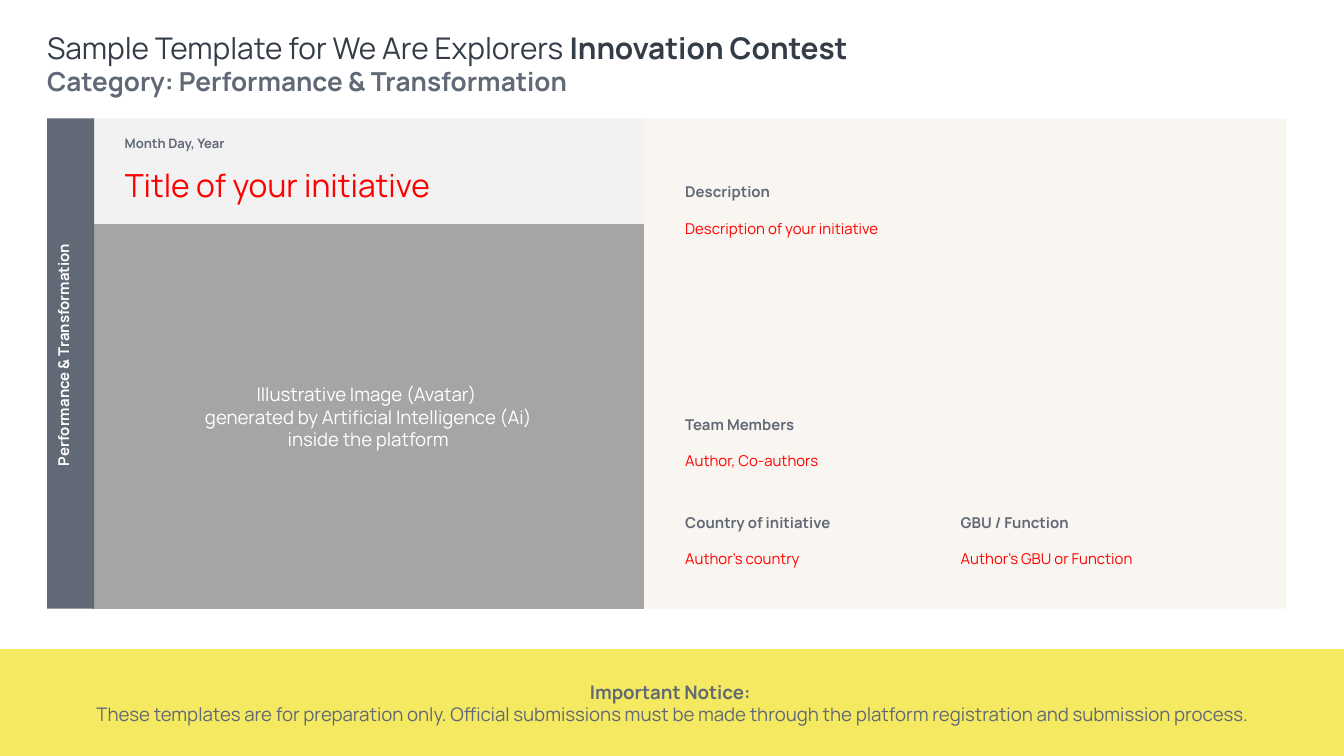
from dataclasses import dataclass

from pptx import Presentation
from pptx.dml.color import RGBColor
from pptx.enum.shapes import MSO_SHAPE
from pptx.enum.text import MSO_ANCHOR, MSO_AUTO_SIZE, PP_ALIGN
from pptx.util import Inches, Pt

RECT = MSO_SHAPE.RECTANGLE
TOP, MIDDLE = MSO_ANCHOR.TOP, MSO_ANCHOR.MIDDLE
LEFT, CENTER = PP_ALIGN.LEFT, PP_ALIGN.CENTER

FONT = "Manrope"
SLATE, DARK, RED, WHITE, GRAY = "616976", "343C47", "FF0000", "FFFFFF", "A5A5A5"
CARD_TOP, CARD_HEIGHT = 0.88, 3.65
CATEGORY = "Performance & Transformation"


@dataclass
class Box:
    left: float
    top: float
    width: float
    height: float


@dataclass
class Line:
    text: str
    size: float
    color: str
    bold: bool = False
    before: float = 0
    spacing: float = 1.0


@dataclass
class Field:
    box: Box
    label: str
    value: str


FIELDS = [
    Field(Box(5, 1.26, 3.8, 1.73), "Description", "Description of your initiative"),
    Field(Box(5, 2.99, 3.8, 0.73), "Team Members", "Author, Co-authors"),
    Field(Box(5, 3.72, 2.05, 0.73), "Country of initiative", "Author’s country"),
    Field(Box(7.05, 3.72, 2.05, 0.73), "GBU / Function", "Author’s GBU or Function"),
]


def rgb(color: str) -> RGBColor:
    return RGBColor.from_string(color)


def inches(box: Box) -> list:
    return [Inches(v) for v in (box.left, box.top, box.width, box.height)]


def set_font(font, size: float, color: str, bold: bool = False) -> None:
    font.name = FONT
    font.size = Pt(size)
    font.bold = bold
    font.color.rgb = rgb(color)


def write(sp, lines: list[Line], align=LEFT, anchor=TOP, inset: float = 0.1) -> None:
    tf = sp.text_frame
    tf.word_wrap = True
    tf.auto_size = MSO_AUTO_SIZE.NONE
    tf.vertical_anchor = anchor
    tf.margin_left = tf.margin_right = tf.margin_top = tf.margin_bottom = Inches(inset)
    for i, line in enumerate(lines):
        p = tf.add_paragraph() if i else tf.paragraphs[0]
        p.alignment = align
        p.line_spacing = line.spacing
        p.space_before = Pt(line.before)
        set_font(p.font, line.size, line.color, line.bold)
        p.add_run().text = line.text


def add_panel(s, box: Box, fill: str, border: str = ""):
    sp = s.shapes.add_shape(RECT, *inches(box))
    sp.shadow.inherit = False
    sp.fill.solid()
    sp.fill.fore_color.rgb = rgb(fill)
    if border:
        sp.line.color.rgb = rgb(border)
        sp.line.width = Pt(0.75)
    else:
        sp.line.fill.background()
    return sp


def add_text(s, box: Box, lines: list[Line], align=LEFT):
    sp = s.shapes.add_textbox(*inches(box))
    write(sp, lines, align)
    return sp


def add_title(s) -> None:
    sp = s.shapes.title
    sp.left, sp.top, sp.width, sp.height = inches(Box(0.35, 0.22, 9.05, 0.48))
    write(sp, [
        Line("Sample Template for We Are Explorers ", 16, DARK),
        Line(f"Category: {CATEGORY}", 14, SLATE, bold=True),
    ], inset=0)
    r = sp.text_frame.paragraphs[0].add_run()
    r.text = "Innovation Contest"
    r.font.bold = True


def main() -> None:
    prs = Presentation()
    prs.slide_width = Inches(10)
    prs.slide_height = prs.slide_width * 9 // 16
    s = prs.slides.add_slide(prs.slide_layouts[5])
    add_title(s)

    add_panel(s, Box(4.79, CARD_TOP, 4.78, CARD_HEIGHT), "F9F5F0")
    add_panel(s, Box(0.69, CARD_TOP, 4.1, CARD_HEIGHT), "F2F2F2")

    notice = add_panel(s, Box(0, 4.83, 10, 0.8), "F4E960")
    write(notice, [
        Line("Important Notice: ", 10, SLATE, bold=True),
        Line("These templates are for preparation only. Official submissions must be "
             "made through the platform registration and submission process.", 10, SLATE),
    ], CENTER, MIDDLE)

    avatar = add_panel(s, Box(0.69, 1.67, 4.1, 2.86), GRAY, border=GRAY)
    avatar_text = ("Illustrative Image (Avatar) ",
                   "generated by Artificial Intelligence (Ai)",
                   "inside the platform")
    write(avatar, [Line(t, 10, WHITE) for t in avatar_text], CENTER, MIDDLE)

    add_text(s, Box(0.83, 0.94, 1.37, 0.32),
             [Line("Month Day, Year", 7, SLATE, bold=True, spacing=0.7)])
    add_text(s, Box(0.83, 1.13, 3.59, 0.48), [Line("Title of your initiative", 17, RED)])

    for field in FIELDS:
        add_text(s, field.box, [
            Line(field.label, 8, SLATE, bold=True),
            Line(field.value, 8, RED, before=10),
        ])

    add_panel(s, Box(0.35, CARD_TOP, 0.35, CARD_HEIGHT), SLATE)
    side_label = add_text(s, Box(-0.72, 2.47, 2.44, 0.34),
                          [Line(CATEGORY, 8, WHITE, bold=True, spacing=0.8)], CENTER)
    side_label.rotation = 270

    prs.save("out.pptx")


if __name__ == "__main__":
    main()
